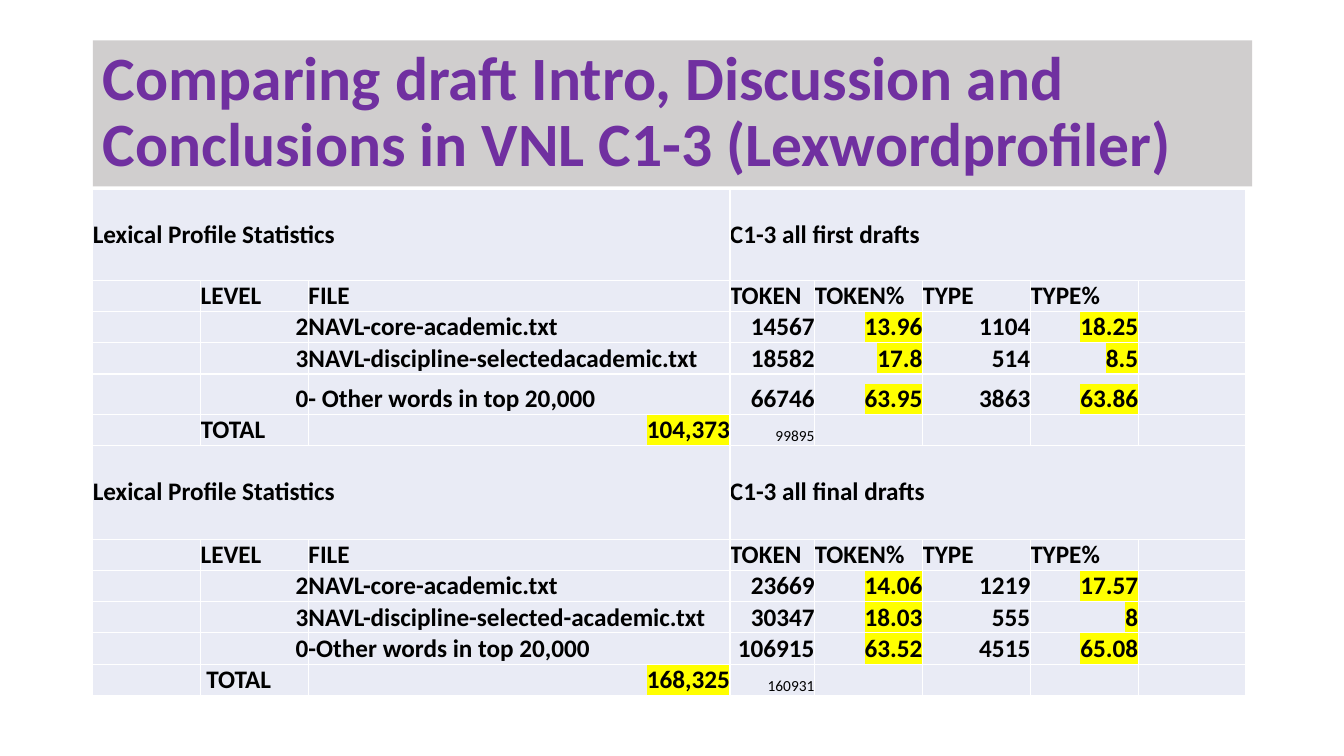
from dataclasses import dataclass
from typing import Optional

from lxml import etree
from pptx import Presentation
from pptx import util as u
from pptx.dml.color import RGBColor
from pptx.enum import text
from pptx.oxml.ns import qn

EMU_PER_PX = 9144
FONT = "Calibri"
BLACK, WHITE, YELLOW = "000000", "FFFFFF", "FFFF00"
PURPLE, TITLE_GREY, CELL_BLUE = "7030A0", "D0CECE", "E9EBF5"
LEFT, RIGHT = text.PP_ALIGN.LEFT, text.PP_ALIGN.RIGHT

COLUMN_WIDTHS = [107, 107, 418, 84, 107, 107, 107, 107]
ROW_HEIGHTS = [90, 31, 31, 31, 40, 31, 93, 31, 31, 31, 31, 31]
HEADINGS = ["LEVEL", "FILE", "TOKEN", "TOKEN%", "TYPE", "TYPE%"]
FILE_COLUMN, TOKEN_COLUMN = 2, 3
PERCENT_COLUMNS = (4, 6)


@dataclass
class Profile:
    """Word counts of one set of drafts, one tuple per word list."""
    drafts: str
    word_lists: list[tuple[str, ...]]
    total_label: str
    total: str
    listed_tokens: str


PROFILES = [
    Profile("C1-3 all first drafts", [
        ("2", "NAVL-core-academic.txt", "14567", "13.96", "1104", "18.25"),
        ("3", "NAVL-discipline-selectedacademic.txt", "18582", "17.8", "514", "8.5"),
        ("0", "- Other words in top 20,000", "66746", "63.95", "3863", "63.86"),
    ], "TOTAL", "104,373", "99895"),
    Profile("C1-3 all final drafts", [
        ("2", "NAVL-core-academic.txt", "23669", "14.06", "1219", "17.57"),
        ("3", "NAVL-discipline-selected-academic.txt", "30347", "18.03", "555", "8"),
        ("0", "-Other words in top 20,000", "106915", "63.52", "4515", "65.08"),
    ], " TOTAL", "168,325", "160931"),
]


def px(length: int) -> u.Emu:
    return u.Emu(length * EMU_PER_PX)


def color(value: str) -> RGBColor:
    return RGBColor.from_string(value)


def write(frame, words: str, *, size: int = 18, bold: bool = True, ink: str = BLACK,
          align=LEFT, highlight: Optional[str] = None,
          line_spacing: Optional[float] = None) -> None:
    paragraph = frame.paragraphs[0]
    paragraph.alignment = align
    paragraph.line_spacing = line_spacing
    run = paragraph.add_run()
    run.text = words
    run.font.name = FONT
    run.font.size = u.Pt(size)
    run.font.bold = bold
    run.font.color.rgb = color(ink)
    if highlight:
        mark = etree.Element(qn("a:highlight"))
        etree.SubElement(mark, qn("a:srgbClr"), val=highlight)
        run.font._element.find(qn("a:solidFill")).addnext(mark)


def format_cell(cell) -> None:
    """Give a cell white borders, a pale fill and no margins."""
    cell.margin_left = cell.margin_right = cell.margin_top = cell.margin_bottom = 0
    cell.vertical_anchor = text.MSO_ANCHOR.BOTTOM
    properties = cell._tc.get_or_add_tcPr()
    for side in "LRTB":
        line = etree.SubElement(properties, qn(f"a:ln{side}"), w=str(u.Pt(1)))
        fill = etree.SubElement(line, qn("a:solidFill"))
        etree.SubElement(fill, qn("a:srgbClr"), val=WHITE)
    cell.fill.solid()
    cell.fill.fore_color.rgb = color(CELL_BLUE)


def add_title(slide) -> None:
    title = slide.shapes.title
    title.left, title.top, title.width, title.height = map(px, (92, 40, 1150, 145))
    title.fill.solid()
    title.fill.fore_color.rgb = color(TITLE_GREY)
    frame = title.text_frame
    frame.word_wrap = True
    frame.auto_size = text.MSO_AUTO_SIZE.NONE
    frame.vertical_anchor = text.MSO_ANCHOR.MIDDLE
    write(frame, "Comparing draft Intro, Discussion and Conclusions in VNL C1-3 "
          "(Lexwordprofiler)", size=44, ink=PURPLE, line_spacing=0.9)


def add_grid(slide):
    frame = slide.shapes.add_table(len(ROW_HEIGHTS), len(COLUMN_WIDTHS), px(92), px(188),
                                   px(sum(COLUMN_WIDTHS)), px(sum(ROW_HEIGHTS)))
    table = frame.table
    table.first_row = table.horz_banding = False
    for column, width in zip(table.columns, COLUMN_WIDTHS):
        column.width = px(width)
    for row, height in zip(table.rows, ROW_HEIGHTS):
        row.height = px(height)
    for cell in table.iter_cells():
        format_cell(cell)
    return table


def fill_profile(table, top: int, profile: Profile) -> None:
    """Write one profile into the six table rows that start at top."""
    last_column = len(COLUMN_WIDTHS) - 1
    for first, last, words in ((0, FILE_COLUMN, "Lexical Profile Statistics"),
                               (TOKEN_COLUMN, last_column, profile.drafts)):
        cell = table.cell(top, first)
        cell.merge(table.cell(top, last))
        cell.vertical_anchor = text.MSO_ANCHOR.MIDDLE
        write(cell.text_frame, words)

    for column, heading in enumerate(HEADINGS, 1):
        write(table.cell(top + 1, column).text_frame, heading)

    for row, values in enumerate(profile.word_lists, top + 2):
        for column, value in enumerate(values, 1):
            write(table.cell(row, column).text_frame, value,
                  align=LEFT if column == FILE_COLUMN else RIGHT,
                  highlight=YELLOW if column in PERCENT_COLUMNS else None)

    total_row = top + 2 + len(profile.word_lists)
    write(table.cell(total_row, 1).text_frame, profile.total_label)
    write(table.cell(total_row, FILE_COLUMN).text_frame, profile.total,
          align=RIGHT, highlight=YELLOW)
    write(table.cell(total_row, TOKEN_COLUMN).text_frame, profile.listed_tokens,
          size=11, bold=False, align=RIGHT)


def main() -> None:
    presentation = Presentation()
    presentation.slide_width, presentation.slide_height = px(1333), px(750)
    slide = presentation.slides.add_slide(presentation.slide_layouts[5])
    add_title(slide)
    table = add_grid(slide)
    rows_per_profile = len(ROW_HEIGHTS) // len(PROFILES)
    for index, profile in enumerate(PROFILES):
        fill_profile(table, index * rows_per_profile, profile)
    presentation.save("out.pptx")


if __name__ == "__main__":
    main()
